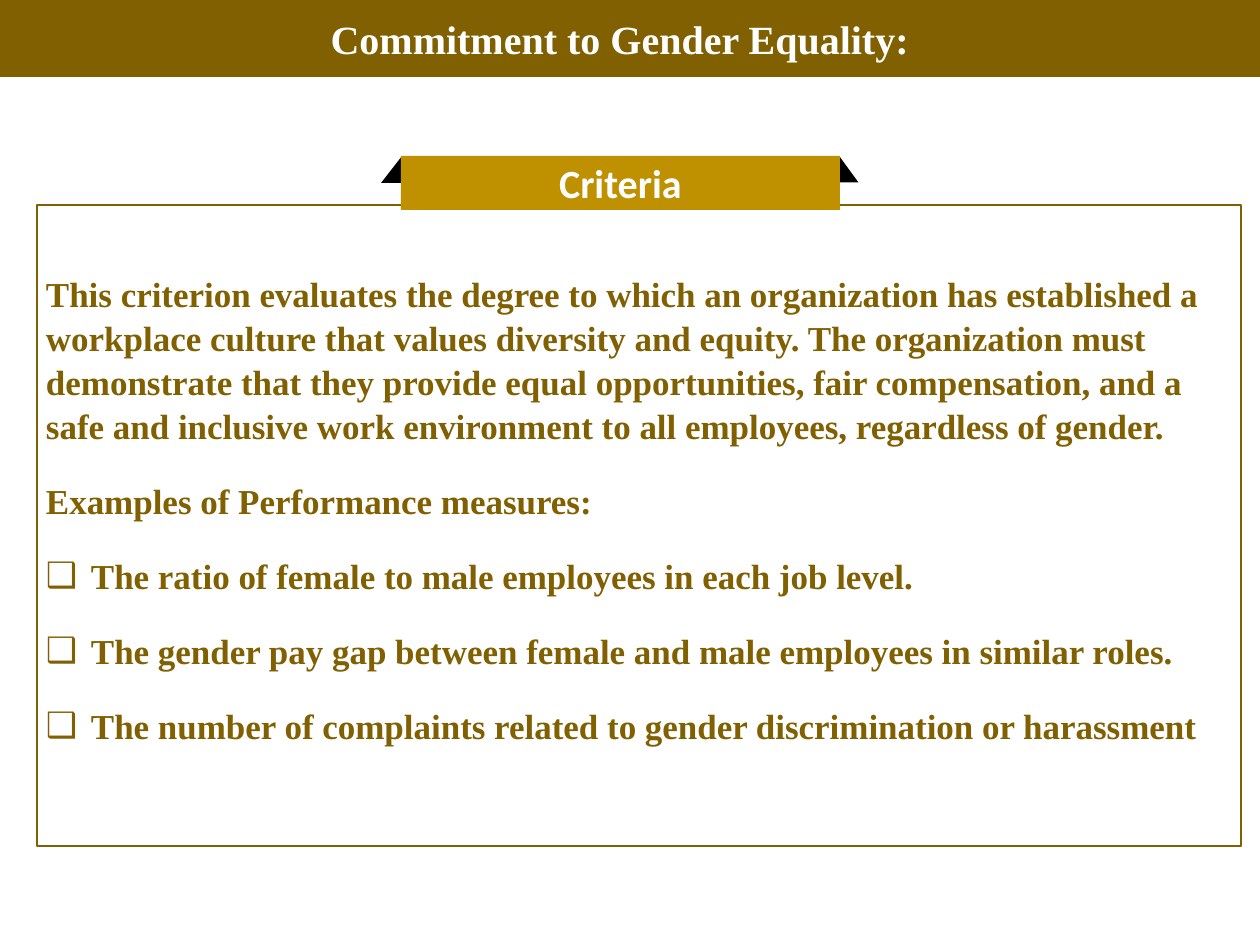
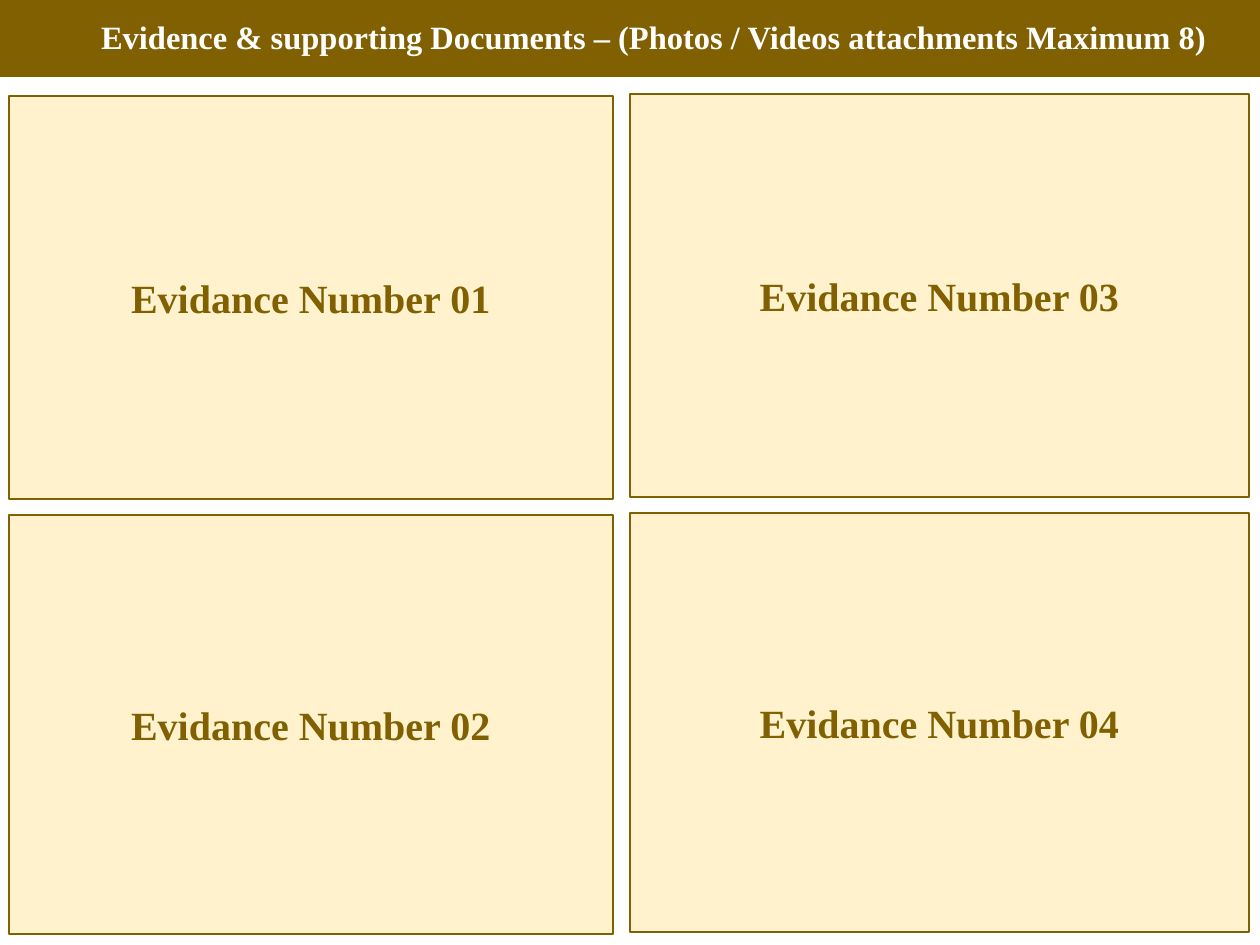
import pptx
import pptx.dml.color
import pptx.enum.shapes
import pptx.enum.text
import pptx.oxml.ns
import pptx.util
from lxml import etree

PX = 914400 // 90
COLORS = {"bronze": "806000", "gold": "BF9000", "cream": "FFF2CC", "fold": "000000", "light": "FFFFFF"}
SERIF, SANS = "Times New Roman", "Calibri"
SHAPE = pptx.enum.shapes.MSO_SHAPE
ALIGN = pptx.enum.text.PP_ALIGN
ANCHOR = pptx.enum.text.MSO_ANCHOR
GROW = pptx.enum.text.MSO_AUTO_SIZE.SHAPE_TO_FIT_TEXT
BAND = (0, -2, 1260, 79)

CRITERION = (
    "This criterion evaluates the degree to which an organization has established a workplace culture "
    "that values diversity and equity. The organization must demonstrate that they provide equal "
    "opportunities, fair compensation, and a safe and inclusive work environment to all employees, "
    "regardless of gender."
)
MEASURES = [
    "The ratio of female to male employees in each job level.",
    "The gender pay gap between female and male employees in similar roles.",
    "The number of complaints related to gender discrimination or harassment",
]


def color(key):
    """Return the RGB colour of a palette key."""
    return pptx.dml.color.RGBColor.from_string(COLORS[key])


def move(shape, box):
    """Place a shape at a box given in px."""
    shape.left, shape.top, shape.width, shape.height = (value * PX for value in box)


def write(paragraph, text, size, ink, font=SERIF, align=ALIGN.LEFT):
    """Add one bold run to a paragraph."""
    paragraph.alignment = align
    run = paragraph.add_run()
    run.text = text
    run.font.name, run.font.size, run.font.bold = font, pptx.util.Pt(size), True
    run.font.color.rgb = color(ink)


def draw(shapes, kind, box, fill=None, line=None):
    """Add a flat preset shape."""
    shape = shapes.add_shape(kind, *(value * PX for value in box))
    shape.shadow.inherit = False
    if fill:
        shape.fill.solid()
        shape.fill.fore_color.rgb = color(fill)
    else:
        shape.fill.background()
    if line:
        shape.line.color.rgb = color(line)
        shape.line.width = pptx.util.Pt(1)
    else:
        shape.line.fill.background()
    return shape


def label(shape, text, ink, font=SERIF):
    """Centre a label in a shape."""
    shape.text_frame.word_wrap = True
    shape.text_frame.vertical_anchor = ANCHOR.MIDDLE
    write(shape.text_frame.paragraphs[0], text, 32, ink, font, ALIGN.CENTER)


def add_header(slide, text, box, size, align):
    """Put the title on the bronze band, at a box relative to the band."""
    title = slide.shapes.title
    band = draw(slide.shapes, SHAPE.RECTANGLE, BAND, "bronze")
    title.element.addprevious(band.element)
    x, y, width, height = box
    move(title, (BAND[0] + x, BAND[1] + y, width, height))
    frame = title.text_frame
    frame.word_wrap, frame.auto_size = True, GROW
    frame.vertical_anchor = ANCHOR.TOP
    write(frame.paragraphs[0], text, size, "light", align=align)


def set_bullet(paragraph, mark=None):
    """Give a paragraph a hanging bullet, or none."""
    properties = paragraph._p.get_or_add_pPr()
    hang = 45 * PX if mark else 0
    properties.set("marL", str(hang))
    properties.set("indent", str(-hang))
    bullet = etree.SubElement(properties, pptx.oxml.ns.qn("a:buChar" if mark else "a:buNone"))
    if mark:
        bullet.set("char", mark)


def add_ribbon(slide, box):
    """Draw the Criteria ribbon with its two folded ends."""
    x, y, width, height = box
    ribbon = slide.shapes.add_group_shape().shapes
    left_fold = draw(ribbon, SHAPE.ISOSCELES_TRIANGLE, (x - 20, y, 21, 27), "fold")
    right_fold = draw(ribbon, SHAPE.ISOSCELES_TRIANGLE, (x + width - 4, y + 4, 26, 19), "fold")
    right_fold.rotation = 90
    for fold in (left_fold, right_fold):
        fold.adjustments[0] = 1
    label(draw(ribbon, SHAPE.RECTANGLE, box, "gold"), "Criteria", "light", SANS)


def add_criteria(slide, box):
    """Fill the framed panel with the criterion and its measures."""
    x, y, width, height = box
    frame_line = draw(slide.shapes, SHAPE.RECTANGLE, box, line="bronze")
    body = slide.placeholders[1]
    body.element.addprevious(frame_line.element)
    move(body, (x, y + 61, width - 18, 470))
    text_frame = body.text_frame
    text_frame.word_wrap, text_frame.auto_size = True, GROW
    text_frame.vertical_anchor = ANCHOR.TOP
    entries = [(CRITERION, None), ("Examples of Performance measures:", None)]
    entries += [(measure, "❑") for measure in MEASURES]
    for index, (text, mark) in enumerate(entries):
        paragraph = text_frame.add_paragraph() if index else text_frame.paragraphs[0]
        set_bullet(paragraph, mark)
        paragraph.line_spacing = 1.05
        paragraph.space_before = pptx.util.Pt(12.3 if index else 0)
        paragraph.space_after = pptx.util.Pt(12.3)
        paragraph.font.size = pptx.util.Pt(28)
        write(paragraph, text, 28, "bronze")
    add_ribbon(slide, (x + 364, y - 49, 439, 54))


def add_evidence(slide, box):
    """Lay out four numbered evidence panels, column by column."""
    x, y, width, height = box
    gap, left_width, top_height = 17, 604, 403
    columns = [(x, left_width, 2), (x + left_width + gap, width - left_width - gap, 0)]
    rows = [(y, top_height), (y + top_height + gap - 1, height - top_height - gap + 1)]
    cells = [(cx, ry + drop, cw, rh) for cx, cw, drop in columns for ry, rh in rows]
    for number, cell in enumerate(cells, 1):
        panel = draw(slide.shapes, SHAPE.RECTANGLE, cell, "cream", "bronze")
        label(panel, f"Evidance Number {number:02d}", "bronze")


def main():
    """Build both slides and save them."""
    deck = pptx.Presentation()
    deck.slide_width, deck.slide_height = 1260 * PX, 945 * PX

    criteria = deck.slides.add_slide(deck.slide_layouts[1])
    add_header(criteria, "Commitment to Gender Equality:", (28, 12, 1184, 58), 32, ALIGN.CENTER)
    add_criteria(criteria, (37, 205, 1204, 641))

    evidence = deck.slides.add_slide(deck.slide_layouts[5])
    add_header(
        evidence,
        "Evidence & supporting Documents – (Photos / Videos attachments Maximum 8)",
        (76, 15, 1161, 49), 26, ALIGN.LEFT,
    )
    evidence.shapes.title.text_frame.margin_left = 25 * PX
    add_evidence(evidence, (9, 94, 1240, 838))

    deck.save("out.pptx")


if __name__ == "__main__":
    main()
